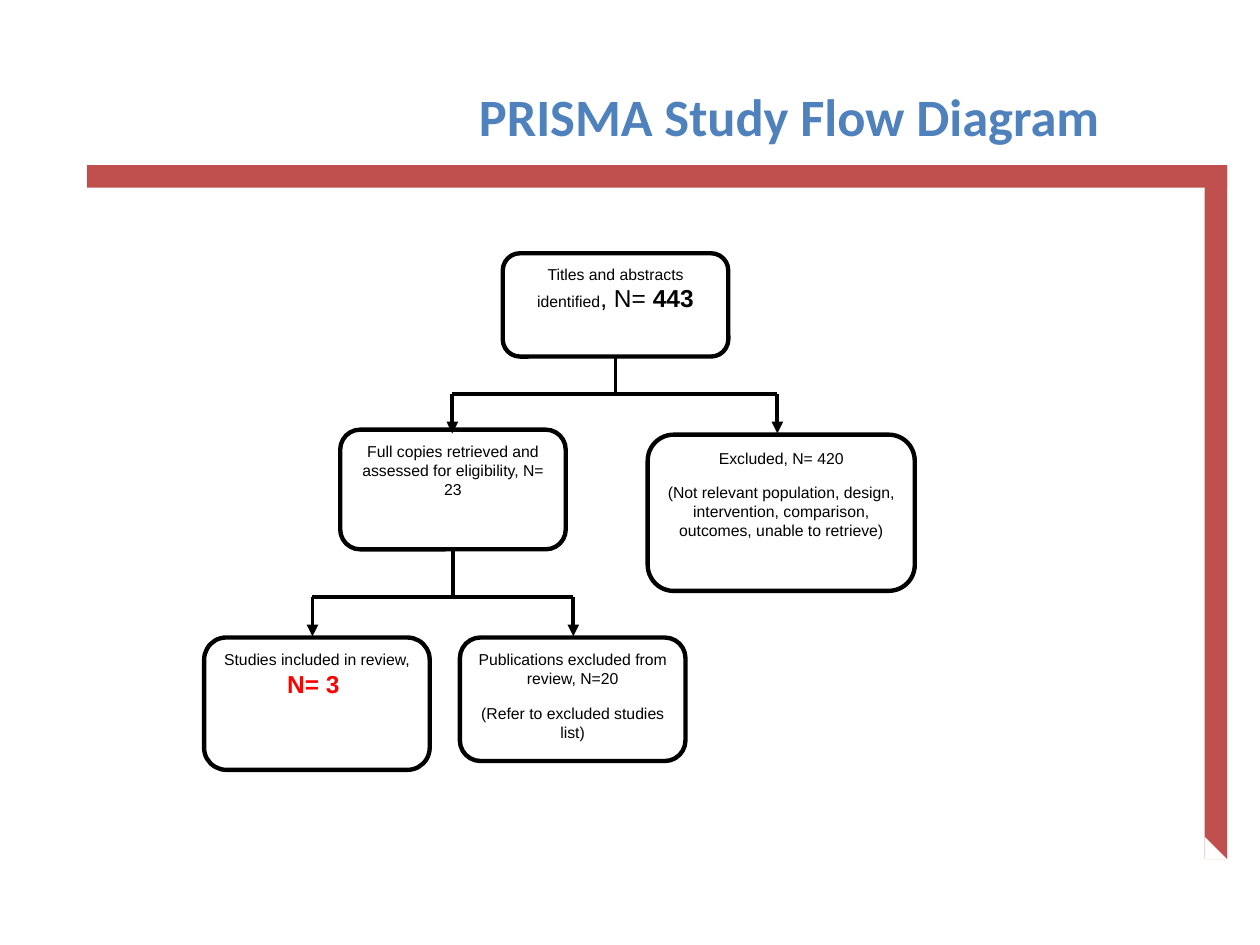
from collections import namedtuple

from lxml import etree
from pptx import Presentation
from pptx.dml.color import RGBColor
from pptx.enum.shapes import MSO_CONNECTOR, MSO_SHAPE
from pptx.enum.text import MSO_ANCHOR, MSO_AUTO_SIZE, PP_ALIGN
from pptx.oxml.ns import qn
from pptx.util import Inches, Pt

BLACK = RGBColor(0x00, 0x00, 0x00)
WHITE = RGBColor(0xFF, 0xFF, 0xFF)
RED = RGBColor(0xFF, 0x00, 0x00)
BRICK = RGBColor(0xC0, 0x50, 0x4D)
BLUE = RGBColor(0x4F, 0x81, 0xBD)

# The slide is a grid of 100 columns by 75 rows.
CELL = Inches(0.1)
COLUMNS, ROWS = 100, 75

Box = namedtuple("Box", "left top width height")
Run = namedtuple("Run", "text size bold color", defaults=(9, False, BLACK))


def grid(*cells):
    return [round(cell * CELL) for cell in cells]


def add_run(paragraph, run, font_name):
    text_run = paragraph.add_run()
    text_run.text = run.text
    font = text_run.font
    font.name, font.size, font.bold = font_name, Pt(run.size), run.bold
    font.color.rgb = run.color


def add_filled(slide, kind, box, color):
    shape = slide.shapes.add_shape(kind, *grid(*box))
    shape.shadow.inherit = False
    shape.fill.solid()
    shape.fill.fore_color.rgb = color
    shape.line.fill.background()
    return shape


def add_frame(slide, box, thickness):
    """Bar along the top and down the right, its lower end cut on the slant."""
    right = box.left + box.width - thickness
    bottom = box.top + box.height - thickness
    add_filled(slide, MSO_SHAPE.RECTANGLE, box._replace(height=thickness), BRICK)
    add_filled(slide, MSO_SHAPE.RECTANGLE, box._replace(left=right, width=thickness), BRICK)
    cut = Box(right, bottom, thickness, thickness)
    add_filled(slide, MSO_SHAPE.ISOSCELES_TRIANGLE, cut, WHITE).adjustments[0] = 0


def add_title(slide, box, text):
    title = slide.shapes.title
    title.left, title.top, title.width, title.height = grid(*box)
    frame = title.text_frame
    frame.auto_size = MSO_AUTO_SIZE.NONE
    frame.word_wrap = True
    frame.vertical_anchor = MSO_ANCHOR.BOTTOM
    paragraph = frame.paragraphs[0]
    paragraph.alignment = PP_ALIGN.CENTER
    paragraph._p.get_or_add_pPr().set("marL", str(Inches(0.26)))
    add_run(paragraph, Run(text, 30, True, BLUE), "Calibri")


def add_step(slide, box, paragraphs):
    step = add_filled(slide, MSO_SHAPE.ROUNDED_RECTANGLE, box, WHITE)
    step.line.color.rgb = BLACK
    step.line.width = Pt(2.5)
    frame = step.text_frame
    frame.word_wrap = True
    frame.vertical_anchor = MSO_ANCHOR.TOP
    for index, runs in enumerate(paragraphs):
        paragraph = frame.add_paragraph() if index else frame.paragraphs[0]
        paragraph.alignment = PP_ALIGN.CENTER
        paragraph.space_before = Pt(9)
        for run in runs:
            add_run(paragraph, run, "Arial")


def add_line(slide, start, end, arrow=False):
    line = slide.shapes.add_connector(MSO_CONNECTOR.STRAIGHT, *grid(*start, *end))
    line.line.color.rgb = BLACK
    line.line.width = Pt(2.25)
    if arrow:
        etree.SubElement(line.line._get_or_add_ln(), qn("a:tailEnd"), type="triangle")
    etree.SubElement(line._element.spPr, qn("a:effectLst"))


def add_branch(slide, parent, bar, drops, drop_height=3.1):
    """Stem below the parent, a bar at the given row, and an arrow down at each drop."""
    stem = parent.left + parent.width / 2
    add_line(slide, (stem, parent.top + parent.height), (stem, bar))
    add_line(slide, (drops[0], bar), (drops[-1], bar))
    for drop in drops:
        add_line(slide, (drop, bar), (drop, bar + drop_height), arrow=True)


def add_flow(slide):
    identified = Box(39.9, 20.1, 17.9, 8.2)
    retrieved = Box(27, 34.1, 17.9, 9.5)
    excluded = Box(51.4, 34.5, 21.2, 12.4)
    included = Box(16.2, 50.6, 17.9, 10.5)
    rejected = Box(36.5, 50.6, 17.9, 9.8)
    steps = [
        (identified, [[Run("Titles and abstracts identified"), Run(", N= ", 14),
                       Run("443", 14, True)]]),
        (retrieved, [[Run("Full copies retrieved and assessed for eligibility, N= 23")]]),
        (excluded, [[Run("Excluded, N= 420")],
                    [Run("(Not relevant population, design, intervention, "
                         "comparison, outcomes, unable to retrieve)")]]),
        (included, [[Run("Studies included in review, "), Run("N= 3 ", 14, True, RED)]]),
        (rejected, [[Run("Publications excluded from review, N=20")],
                    [Run("(Refer to excluded studies list)")]]),
    ]
    for box, paragraphs in steps:
        add_step(slide, box, paragraphs)
    add_branch(slide, identified, 31.3, (35.9, 61.7))
    add_branch(slide, retrieved, 47.4, (24.8, 45.5))


def main():
    presentation = Presentation()
    presentation.slide_width, presentation.slide_height = grid(COLUMNS, ROWS)
    slide = presentation.slides.add_slide(presentation.slide_layouts[5])
    add_frame(slide, Box(6.9, 13.1, 90.5, 55.1), 1.8)
    add_title(slide, Box(25.2, 1.8, 72.3, 10.4), "PRISMA Study Flow Diagram")
    add_flow(slide)
    presentation.save("out.pptx")


if __name__ == "__main__":
    main()
